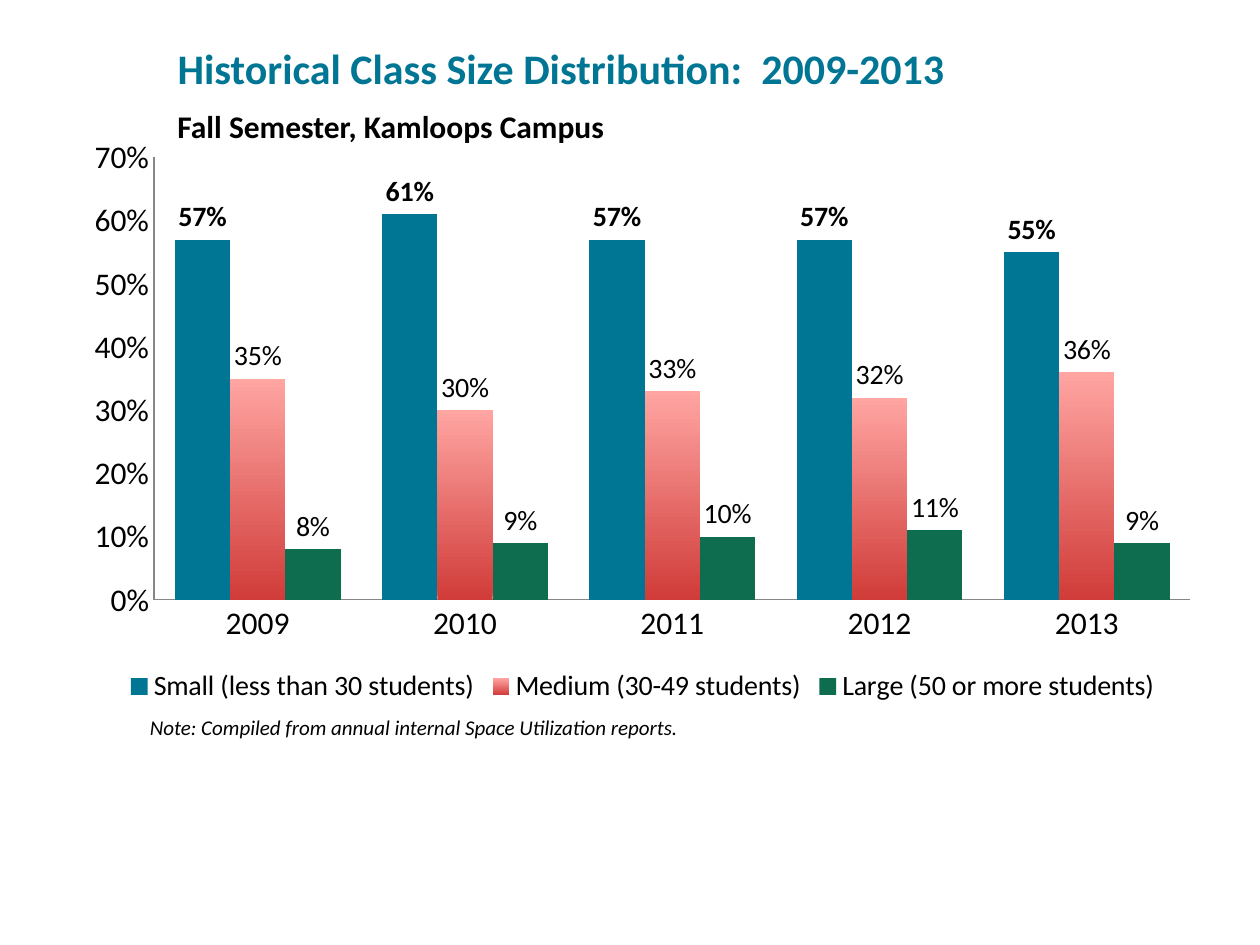
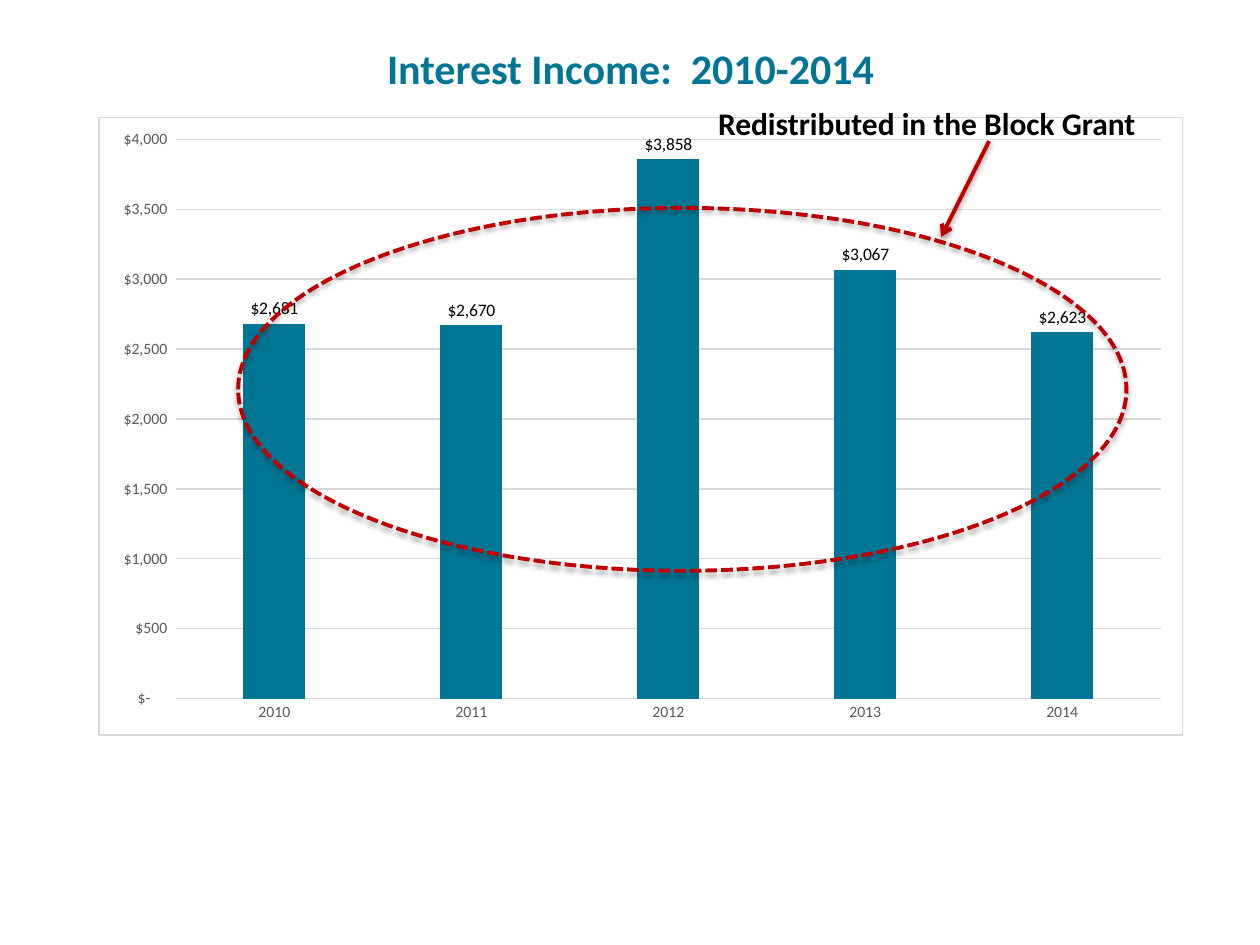
from dataclasses import dataclass

from pptx import Presentation
from pptx.chart.data import CategoryChartData
from pptx.dml.color import RGBColor
from pptx.enum.chart import XL_CHART_TYPE as ChartType
from pptx.enum.chart import XL_LABEL_POSITION as LabelPosition
from pptx.enum.chart import XL_LEGEND_POSITION as LegendPosition
from pptx.enum.chart import XL_TICK_MARK as TickMark
from pptx.enum.dml import MSO_LINE
from pptx.enum.shapes import MSO_CONNECTOR, MSO_SHAPE
from pptx.enum.text import MSO_ANCHOR, MSO_AUTO_SIZE, PP_ALIGN
from pptx.oxml import parse_xml
from pptx.oxml.ns import nsdecls, qn
from pptx.util import Inches, Pt


@dataclass(frozen=True)
class Theme:
    font: str = "Calibri"
    teal: str = "007694"
    green: str = "0E6D4F"
    rose_top: str = "FFA5A2"
    rose_bottom: str = "D03C39"
    red: str = "C00000"
    black: str = "000000"
    axis_text: str = "595959"
    axis_line: str = "868686"
    grid: str = "D9D9D9"
    white: str = "FFFFFF"
    title: int = 24
    heading: int = 18
    label: int = 16
    note: int = 12
    small_label: int = 10
    small_axis: int = 9


THEME = Theme()
DOLLARS = '_("$"* #,##0_);_("$"* \\(#,##0\\);_("$"* "-"??_);_(@_)'


def rgb(color):
    return RGBColor.from_string(color)


def style_font(font, size, color=THEME.black, bold=False, italic=False):
    font.name = THEME.font
    font.size = Pt(size)
    font.color.rgb = rgb(color)
    font.bold = bold
    font.italic = italic


def style_line(line, color, width=0.75):
    line.color.rgb = rgb(color)
    line.width = Pt(width)


def place(shape, left, top, width, height):
    shape.left, shape.top = Inches(left), Inches(top)
    shape.width, shape.height = Inches(width), Inches(height)


def add_titled_slide(deck, text, bounds, align=PP_ALIGN.LEFT):
    slide = deck.slides.add_slide(deck.slide_layouts[5])
    title = slide.shapes.title
    place(title, *bounds)
    frame = title.text_frame
    frame.text = text
    frame.word_wrap = True
    frame.auto_size = MSO_AUTO_SIZE.SHAPE_TO_FIT_TEXT
    frame.vertical_anchor = MSO_ANCHOR.TOP
    para = frame.paragraphs[0]
    para.alignment = align
    para.space_after = Pt(6)
    style_font(para.font, THEME.title, THEME.teal, bold=True)
    return slide


def add_text(slide, text, bounds, size, wrap=False, **emphasis):
    box = slide.shapes.add_textbox(*map(Inches, bounds))
    frame = box.text_frame
    frame.word_wrap = wrap
    frame.auto_size = MSO_AUTO_SIZE.SHAPE_TO_FIT_TEXT
    frame.text = text
    style_font(frame.paragraphs[0].font, size, **emphasis)


def set_plot_area(chart, bounds, plot):
    """Fix the inner plot area; both rectangles are in slide inches."""
    left, top, width, height = bounds
    shares = {
        "x": (plot[0] - left) / width,
        "y": (plot[1] - top) / height,
        "w": plot[2] / width,
        "h": plot[3] / height,
    }
    modes = "".join(f'<c:{side}Mode val="edge"/>' for side in "xy")
    sizes = "".join(f'<c:{side} val="{share:.3f}"/>' for side, share in shares.items())
    area = chart.element.find(".//" + qn("c:plotArea"))
    for layout in area.findall(qn("c:layout")):
        area.remove(layout)
    area.insert(0, parse_xml(
        f'<c:layout {nsdecls("c")}><c:manualLayout><c:layoutTarget val="inner"/>'
        f"{modes}{sizes}</c:manualLayout></c:layout>"))


def set_chart_frame(chart, fill=None, border=None):
    def paint(color):
        if color is None:
            return "<a:noFill/>"
        return f'<a:solidFill><a:srgbClr val="{color}"/></a:solidFill>'

    chart.element.find(qn("c:chart")).addnext(parse_xml(
        f'<c:spPr {nsdecls("c", "a")}>{paint(fill)}'
        f'<a:ln w="{Pt(0.75)}">{paint(border)}</a:ln></c:spPr>'))


def add_column_chart(slide, bounds, plot_bounds, categories, series, size, gap, overlap=0):
    data = CategoryChartData()
    data.categories = categories
    for name, values in series.items():
        data.add_series(name, values)
    chart = slide.shapes.add_chart(
        ChartType.COLUMN_CLUSTERED, *map(Inches, bounds), data).chart
    chart.has_title = False
    chart.has_legend = False
    style_font(chart.font, size)
    plot = chart.plots[0]
    plot.vary_by_categories = False
    plot.gap_width, plot.overlap = gap, overlap
    for axis in (chart.category_axis, chart.value_axis):
        axis.major_tick_mark = axis.minor_tick_mark = TickMark.NONE
    chart.value_axis.minimum_scale = 0
    chart.value_axis.has_major_gridlines = False
    set_plot_area(chart, bounds, plot_bounds)
    return chart


def format_value_axis(axis, maximum, step, number_format):
    axis.maximum_scale, axis.major_unit = maximum, step
    axis.tick_labels.number_format = number_format
    axis.tick_labels.number_format_is_linked = False


def fill_series(series, color):
    series.format.fill.solid()
    series.format.fill.fore_color.rgb = rgb(color)


def fill_series_gradient(series, bottom, top):
    fill = series.format.fill
    fill.gradient()
    fill.gradient_angle = 90
    for stop, color in zip(fill.gradient_stops, (bottom, top)):
        stop.color.rgb = rgb(color)


def label_series(series, size, number_format, bold=False):
    labels = series.data_labels
    labels.show_value = True
    labels.position = LabelPosition.OUTSIDE_END
    labels.number_format = number_format
    labels.number_format_is_linked = False
    style_font(labels.font, size, bold=bold)


def add_shadow(shape, distance, opacity):
    """Give a shape a soft shadow straight below it."""
    properties = shape.element.spPr
    for effects in properties.findall(qn("a:effectLst")):
        properties.remove(effects)
    properties.append(parse_xml(
        f'<a:effectLst {nsdecls("a")}><a:outerShdw blurRad="{Pt(3.1)}" '
        f'dist="{Pt(distance)}" dir="5400000" rotWithShape="0"><a:srgbClr val="{THEME.black}">'
        f'<a:alpha val="{opacity * 1000}"/></a:srgbClr></a:outerShdw></a:effectLst>'))


def add_dashed_ellipse(slide, bounds):
    ellipse = slide.shapes.add_shape(MSO_SHAPE.OVAL, *map(Inches, bounds))
    ellipse.fill.background()
    style_line(ellipse.line, THEME.red, 2.25)
    ellipse.line.dash_style = MSO_LINE.SQUARE_DOT
    add_shadow(ellipse, 1.8, 35)


def add_arrow(slide, start, end):
    arrow = slide.shapes.add_connector(MSO_CONNECTOR.STRAIGHT, *map(Inches, start + end))
    style_line(arrow.line, THEME.red, 2.25)
    arrow.element.spPr.find(qn("a:ln")).append(
        parse_xml(f'<a:tailEnd {nsdecls("a")} type="arrow"/>'))
    add_shadow(arrow, 1.6, 38)


def build_class_size_slide(deck):
    slide = add_titled_slide(
        deck, "Historical Class Size Distribution:  2009-2013", (1.31, 0.29, 7.69, 0.5))
    add_text(slide, "Fall Semester, Kamloops Campus", (1.31, 0.8, 3.66, 0.4),
             THEME.heading, bold=True)
    chart = add_column_chart(
        slide, (0.57, 1.01, 9.06, 4.62), (1.22, 1.25, 8.23, 3.51),
        [str(year) for year in range(2009, 2014)],
        {
            "Small (less than 30 students)": (0.57, 0.61, 0.57, 0.57, 0.55),
            "Medium (30-49 students)": (0.35, 0.3, 0.33, 0.32, 0.36),
            "Large (50 or more students)": (0.08, 0.09, 0.1, 0.11, 0.09),
        },
        THEME.heading, gap=75)
    set_chart_frame(chart)
    format_value_axis(chart.value_axis, 0.7, 0.1, "0%")
    for axis in (chart.category_axis, chart.value_axis):
        style_line(axis.format.line, THEME.axis_line)

    small, medium, large = chart.plots[0].series
    fill_series(small, THEME.teal)
    fill_series_gradient(medium, THEME.rose_bottom, THEME.rose_top)
    fill_series(large, THEME.green)
    for series, bold in ((small, True), (medium, False), (large, False)):
        label_series(series, THEME.label, "0%", bold)

    chart.has_legend = True
    chart.legend.position = LegendPosition.BOTTOM
    chart.legend.include_in_layout = False
    style_font(chart.legend.font, THEME.label)
    add_text(slide, "Note: Compiled from annual internal Space Utilization reports.",
             (1.09, 5.62, 6.68, 0.3), THEME.note, wrap=True, italic=True)


def build_interest_slide(deck):
    slide = add_titled_slide(
        deck, "Interest Income:  2010-2014", (2.46, 0.29, 5.09, 0.5), PP_ALIGN.CENTER)
    chart = add_column_chart(
        slide, (0.78, 0.93, 8.61, 4.91), (1.39, 1.1, 7.83, 4.45),
        [str(year) for year in range(2010, 2015)],
        {"Series 1": (2681, 2670, 3858, 3067, 2623)},
        THEME.small_label, gap=219, overlap=-27)
    set_chart_frame(chart, THEME.white, THEME.grid)
    value_axis = chart.value_axis
    format_value_axis(value_axis, 4000, 500, DOLLARS)
    value_axis.has_major_gridlines = True
    style_line(value_axis.major_gridlines.format.line, THEME.grid)
    value_axis.format.line.fill.background()
    style_line(chart.category_axis.format.line, THEME.grid)
    for axis in (chart.category_axis, value_axis):
        style_font(axis.tick_labels.font, THEME.small_axis, THEME.axis_text)

    income = chart.plots[0].series[0]
    fill_series(income, THEME.teal)
    label_series(income, THEME.small_label, '"$"#,##0')

    add_dashed_ellipse(slide, (1.89, 1.65, 7.05, 2.88))
    add_text(slide, "Redistributed in the Block Grant", (5.6, 0.78, 3.55, 0.4),
             THEME.heading, bold=True)
    add_arrow(slide, (7.85, 1.12), (7.47, 1.88))


def main():
    deck = Presentation()
    deck.slide_width, deck.slide_height = Inches(10), Inches(7.5)
    build_class_size_slide(deck)
    build_interest_slide(deck)
    deck.save("out.pptx")


if __name__ == "__main__":
    main()
